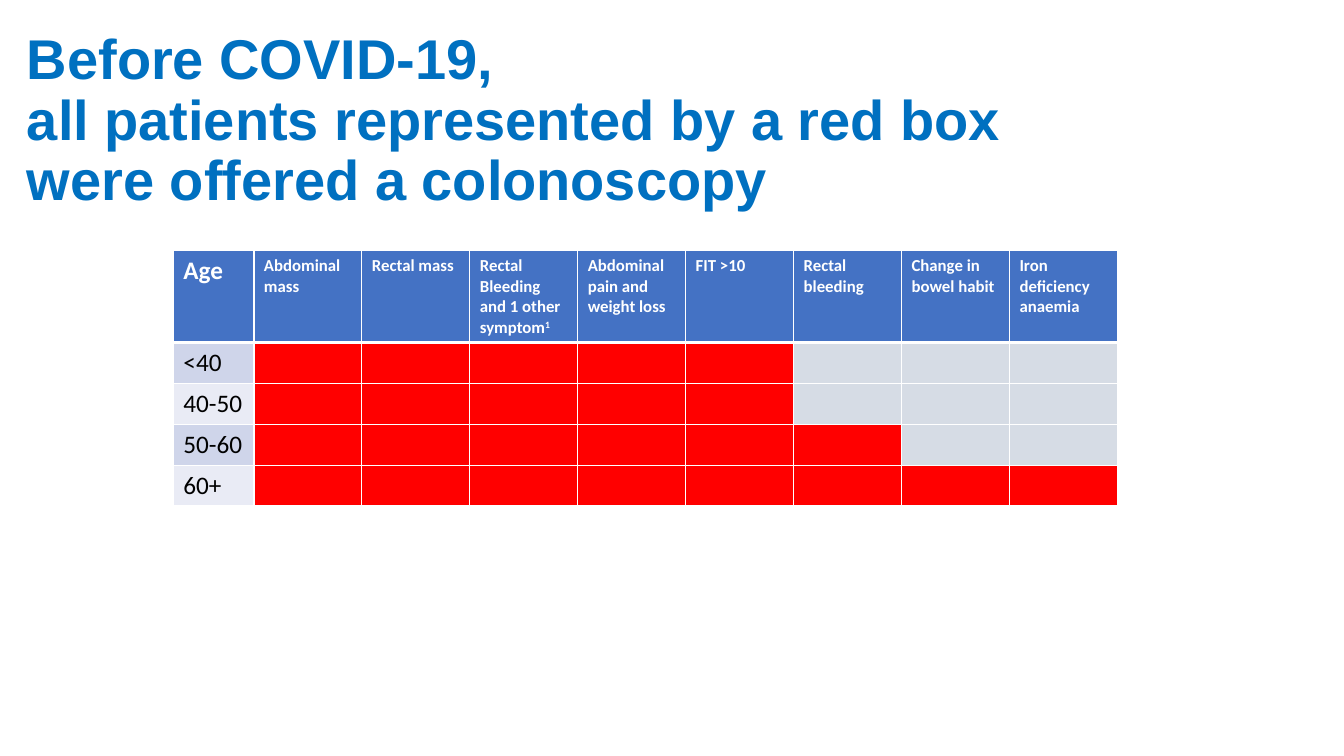
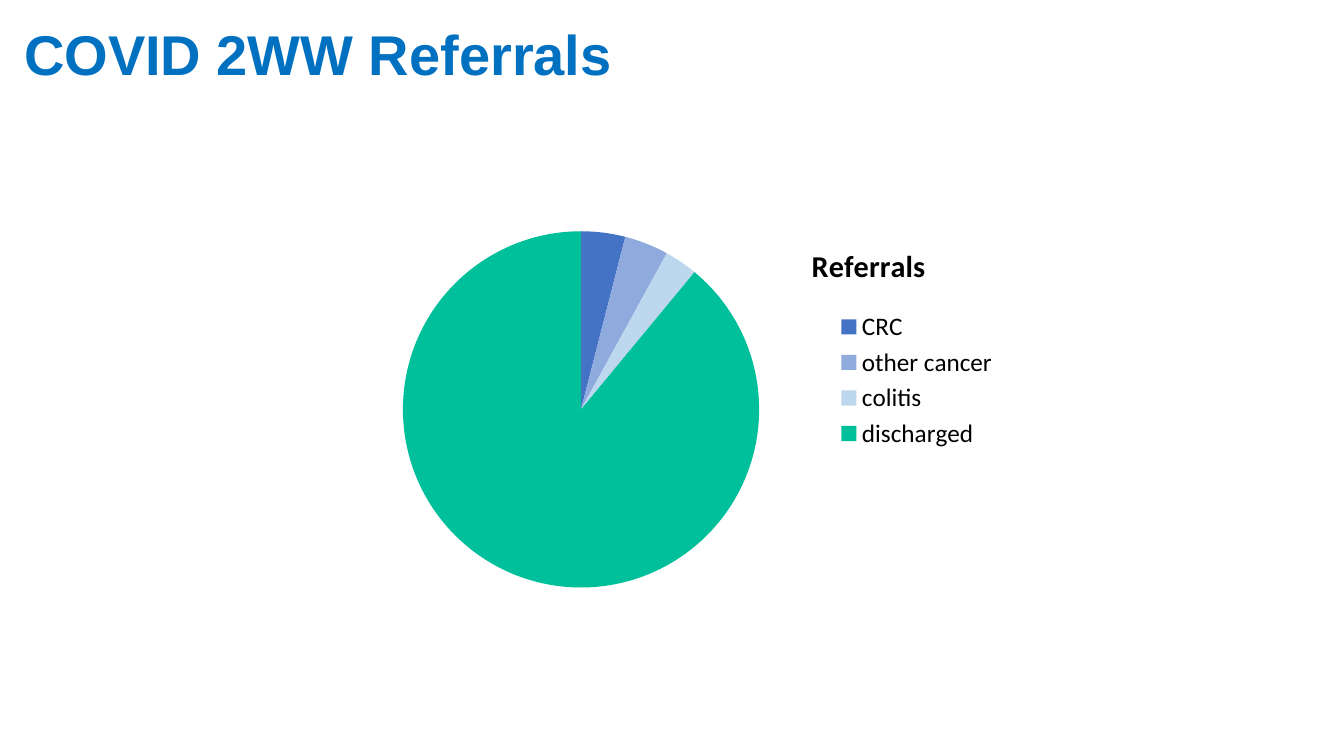
from dataclasses import dataclass

from lxml import etree
from pptx import Presentation
from pptx.chart.data import CategoryChartData
from pptx.dml.color import RGBColor
from pptx.enum.chart import XL_CHART_TYPE, XL_LEGEND_POSITION
from pptx.enum.text import MSO_ANCHOR
from pptx.oxml.ns import qn
from pptx.util import Cm, Pt

PIE = XL_CHART_TYPE.PIE
LEGEND_RIGHT = XL_LEGEND_POSITION.RIGHT
ANCHOR_BOTTOM = MSO_ANCHOR.BOTTOM


@dataclass(frozen=True)
class Theme:
    title_font: str = "Arial"
    body_font: str = "Calibri"
    title_size: float = 40
    chart_title_size: float = 21.6
    body_size: float = 18
    header_size: float = 12
    title_color: str = "0070C0"
    text_color: str = "000000"
    white: str = "FFFFFF"
    header_fill: str = "4472C4"
    bands: tuple = ("CFD5EA", "E9EBF5")
    offered: str = "FF0000"
    not_offered: str = "D6DCE5"
    slices: tuple = ("4472C4", "8FAADC", "BDD7EE", "00C09B")


class DeckBuilder:
    def __init__(self, theme):
        self.theme = theme
        self.deck = Presentation()
        self.deck.slide_width = Cm(33.87)
        self.deck.slide_height = Cm(19.05)
        self.page = None

    def add_page(self):
        self.page = self.deck.slides.add_slide(self.deck.slide_layouts[6])

    def style_font(self, font, size, color, bold=False, name=None):
        font.name = name or self.theme.body_font
        font.size = Pt(size)
        font.bold = bold
        font.color.rgb = RGBColor.from_string(color)

    def add_title(self, text, left, top, height):
        theme = self.theme
        box = self.page.shapes.add_textbox(Cm(left), Cm(top), Cm(27.74), Cm(height))
        frame = box.text_frame
        frame.word_wrap = True
        frame.vertical_anchor = ANCHOR_BOTTOM
        frame.text = text
        para = frame.paragraphs[0]
        para.line_spacing = 0.9
        for span in para.runs:
            self.style_font(span.font, theme.title_size, theme.title_color, True, theme.title_font)

    def fill_cell(self, cell, color, bottom_width=1):
        properties = cell._tc.get_or_add_tcPr()
        widths = {"lnL": 1, "lnR": 1, "lnT": 1, "lnB": bottom_width}
        for side, width in widths.items():
            line = etree.SubElement(properties, qn(f"a:{side}"), w=str(Pt(width)))
            solid = etree.SubElement(line, qn("a:solidFill"))
            etree.SubElement(solid, qn("a:srgbClr"), val=self.theme.white)
        cell.fill.solid()
        cell.fill.fore_color.rgb = RGBColor.from_string(color)

    def write_cell(self, cell, text, size, color, bold=False, superscript=""):
        cell.text = text
        para = cell.text_frame.paragraphs[0]
        if superscript:
            mark = para.add_run()
            mark.text = superscript
            mark._r.get_or_add_rPr().set("baseline", "30000")
        for span in para.runs:
            self.style_font(span.font, size, color, bold)

    def add_age_table(self, headers, offers, left, top):
        theme = self.theme
        widths = [2.03] + [2.72] * (len(headers) - 1)
        heights = [2.31] + [1.03] * len(offers)
        table = self.page.shapes.add_table(
            len(heights), len(widths), Cm(left), Cm(top), Cm(sum(widths)), Cm(sum(heights))
        ).table
        for column, width in zip(table.columns, widths):
            column.width = Cm(width)
        for row, height in zip(table.rows, heights):
            row.height = Cm(height)
        for index, (text, mark) in enumerate(headers):
            cell = table.cell(0, index)
            self.fill_cell(cell, theme.header_fill, 3)
            size = theme.header_size if index else theme.body_size
            self.write_cell(cell, text, size, theme.white, True, mark)
        for row, (age, offered_count) in enumerate(offers, 1):
            label = table.cell(row, 0)
            self.fill_cell(label, theme.bands[(row - 1) % 2])
            self.write_cell(label, age, theme.body_size, theme.text_color)
            for column in range(1, len(headers)):
                color = theme.offered if column <= offered_count else theme.not_offered
                self.fill_cell(table.cell(row, column), color)

    def place_chart_part(self, part, position, **places):
        for old in part.findall(qn("c:layout")):
            part.remove(old)
        layout = etree.Element(qn("c:layout"))
        manual = etree.SubElement(layout, qn("c:manualLayout"))
        if "w" in places:
            etree.SubElement(manual, qn("c:layoutTarget"), val="inner")
        for mode in ("xMode", "yMode"):
            etree.SubElement(manual, qn(f"c:{mode}"), val="edge")
        for key, value in places.items():
            etree.SubElement(manual, qn(f"c:{key}"), val=str(value))
        part.insert(position, layout)

    def add_pie(self, title, values, left, top, width, height):
        theme = self.theme
        data = CategoryChartData()
        data.categories = list(values)
        data.add_series("Series 1", list(values.values()))
        chart = self.page.shapes.add_chart(
            PIE, Cm(left), Cm(top), Cm(width), Cm(height), data
        ).chart
        self.style_font(chart.font, theme.body_size, theme.text_color)
        chart.has_title = True
        chart.chart_title.text_frame.text = title
        span = chart.chart_title.text_frame.paragraphs[0].runs[0]
        self.style_font(span.font, theme.chart_title_size, theme.text_color, True)
        chart.has_legend = True
        chart.legend.position = LEGEND_RIGHT
        chart.legend.include_in_layout = False
        self.style_font(chart.legend.font, theme.body_size, theme.text_color)
        plot = chart.plots[0]
        plot.vary_by_categories = True
        for index, color in enumerate(theme.slices):
            fill = plot.series[0].points[index].format.fill
            fill.solid()
            fill.fore_color.rgb = RGBColor.from_string(color)
        root = chart._chartSpace.find(qn("c:chart"))
        self.place_chart_part(root.find(qn("c:title")), 1, x=0.7, y=0.19)
        self.place_chart_part(root.find(qn("c:legend")), 1, x=0.74, y=0.34)
        self.place_chart_part(root.find(qn("c:plotArea")), 0, x=0.1, y=0.17, w=0.53, h=0.8)


def main():
    builder = DeckBuilder(Theme())

    builder.add_page()
    builder.add_title(
        "Before COVID-19,\vall patients represented by a red box\vwere offered a colonoscopy",
        0.43, 0.61, 4.88,
    )
    headers = [
        ("Age", ""),
        ("Abdominal mass", ""),
        ("Rectal mass", ""),
        ("Rectal Bleeding and 1 other symptom", "1"),
        ("Abdominal pain and weight loss", ""),
        ("FIT >10", ""),
        ("Rectal bleeding", ""),
        ("Change in bowel habit", ""),
        ("Iron deficiency anaemia", ""),
    ]
    offers = [("<40", 5), ("40-50", 5), ("50-60", 6), ("60+", 8)]
    builder.add_age_table(headers, offers, 4.37, 6.32)

    builder.add_page()
    builder.add_title("COVID 2WW Referrals", 0.36, 0.38, 1.96)
    referrals = {"CRC": 4, "other cancer": 4, "colitis": 3, "discharged": 89}
    builder.add_pie("Referrals", referrals, 8.46, 3.89, 16.94, 11.28)

    builder.deck.save("out.pptx")


if __name__ == "__main__":
    main()
